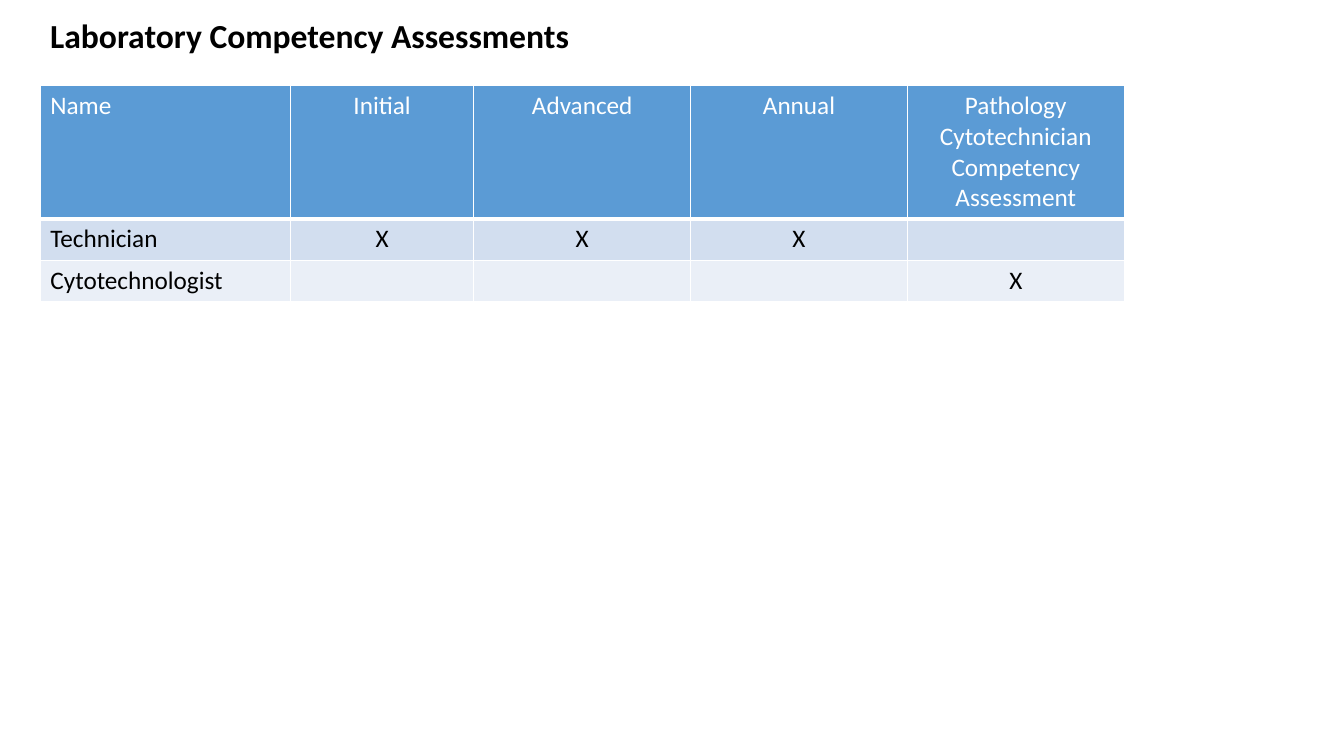
from dataclasses import dataclass

from pptx import Presentation
from pptx import util as u
from pptx.dml.color import RGBColor
from pptx.enum import text
from pptx.oxml import ns, parse_xml


@dataclass(frozen=True)
class Theme:
    font: str = "Calibri"
    title_size: int = 24
    table_size: int = 18
    ink: str = "000000"
    white: str = "FFFFFF"
    header: str = "5B9BD5"
    bands: tuple = ("D2DEEF", "EAEFF7")
    line: int = 1
    header_line: int = 3


THEME = Theme()
COLUMN_WIDTHS = (2.48, 1.82, 2.15, 2.15, 2.15)
ROW_HEIGHTS = (1.3, 0.41, 0.41)
ASSESSMENTS = (
    ("Name", "Initial", "Advanced", "Annual",
     "Pathology Cytotechnician Competency Assessment"),
    ("Technician", "X", "X", "X", ""),
    ("Cytotechnologist", "", "", "", "X"),
)


def style_text(para, size, color, bold=False):
    for span in para.runs:
        span.font.name = THEME.font
        span.font.size = u.Pt(size)
        span.font.bold = bold
        span.font.color.rgb = RGBColor.from_string(color)


def add_title(page, wording):
    box = page.shapes.add_textbox(
        u.Inches(0.4), u.Inches(0.1), u.Inches(5.4), u.Inches(0.5))
    frame = box.text_frame
    frame.text = wording
    frame.word_wrap = False
    frame.auto_size = text.MSO_AUTO_SIZE.SHAPE_TO_FIT_TEXT
    style_text(frame.paragraphs[0], THEME.title_size, THEME.ink, bold=True)


def set_borders(cell, top, bottom):
    properties = cell._tc.get_or_add_tcPr()
    widths = {"lnL": THEME.line, "lnR": THEME.line, "lnT": top, "lnB": bottom}
    for side, width in widths.items():
        properties.append(parse_xml(
            f'<a:{side} {ns.nsdecls("a")} w="{u.Pt(width)}"><a:solidFill>'
            f'<a:srgbClr val="{THEME.white}"/></a:solidFill></a:{side}>'))


def fill_cell(cell, wording, row, column):
    is_header = row == 0
    set_borders(cell,
                top=THEME.header_line if row == 1 else THEME.line,
                bottom=THEME.header_line if is_header else THEME.line)
    cell.fill.solid()
    cell.fill.fore_color.rgb = RGBColor.from_string(
        THEME.header if is_header else THEME.bands[(row - 1) % 2])
    if wording:
        cell.text_frame.text = wording
        para = cell.text_frame.paragraphs[0]
        if column > 0:
            para.alignment = text.PP_ALIGN.CENTER
        style_text(para, THEME.table_size,
                   THEME.white if is_header else THEME.ink)


def add_assessment_table(page, rows):
    table = page.shapes.add_table(
        len(rows), len(COLUMN_WIDTHS), u.Inches(0.4), u.Inches(0.85),
        u.Inches(sum(COLUMN_WIDTHS)), u.Inches(sum(ROW_HEIGHTS))).table
    for column, width in zip(table.columns, COLUMN_WIDTHS):
        column.width = u.Inches(width)
    for row, height in zip(table.rows, ROW_HEIGHTS):
        row.height = u.Inches(height)
    for r, values in enumerate(rows):
        for c, wording in enumerate(values):
            fill_cell(table.cell(r, c), wording, r, c)


def main():
    deck = Presentation()
    deck.slide_width, deck.slide_height = u.Inches(13.33), u.Inches(7.5)
    page = deck.slides.add_slide(deck.slide_layouts[6])

    # Competency table
    add_assessment_table(page, ASSESSMENTS)

    # Heading
    add_title(page, "Laboratory Competency Assessments")

    deck.save("out.pptx")


if __name__ == "__main__":
    main()
